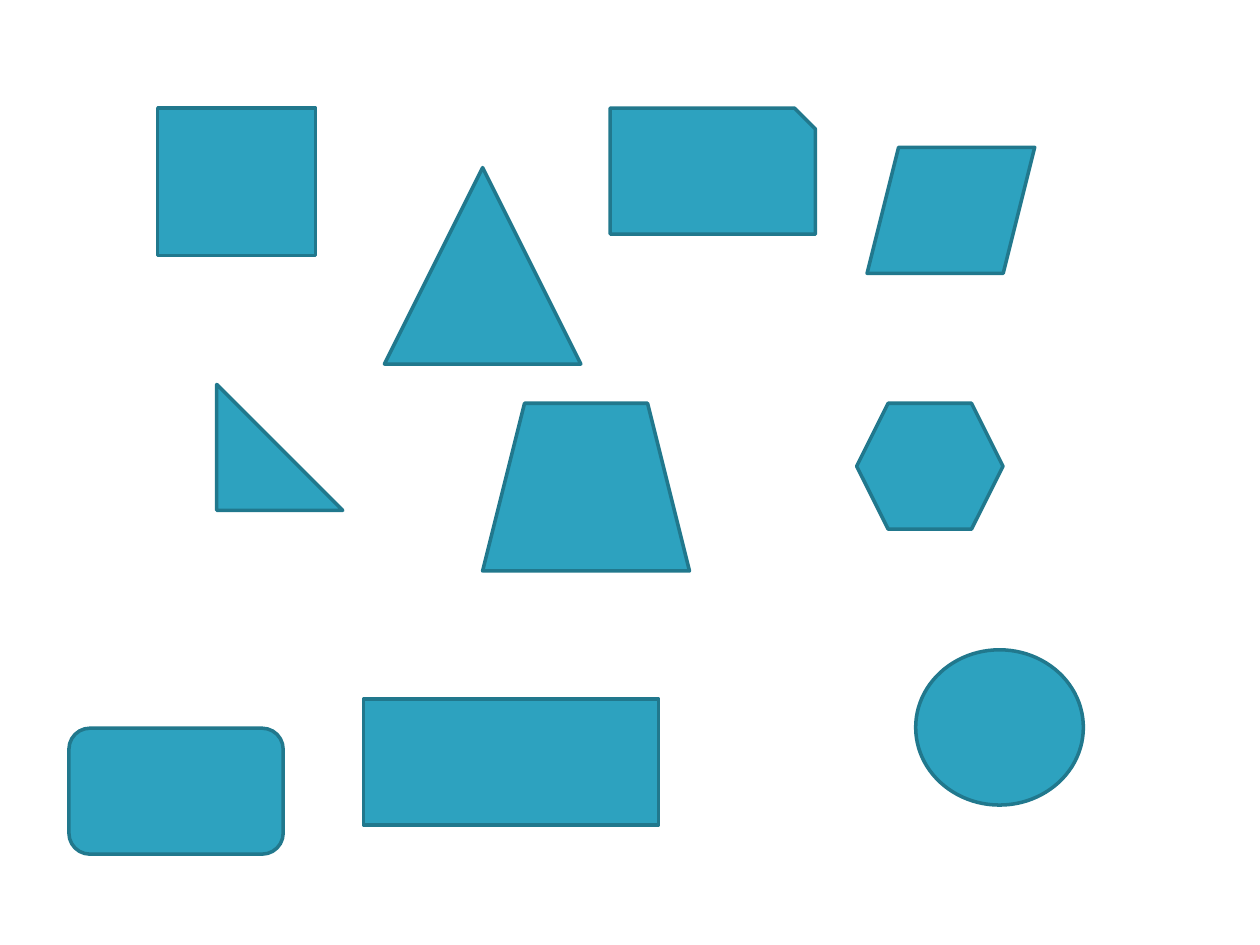
from dataclasses import dataclass

from pptx import Presentation
from pptx.dml.color import RGBColor
from pptx.enum.shapes import MSO_SHAPE
from pptx.util import Cm, Pt


@dataclass(frozen=True)
class Theme:
    fill: RGBColor = RGBColor(0x2D, 0xA2, 0xBF)
    edge: RGBColor = RGBColor(0x21, 0x78, 0x8D)
    width: float = 2


class Board:
    """Holds the style and the current slide."""

    def __init__(self, slide, theme):
        self.slide = slide
        self.theme = theme

    def figure(self, kind, left, top, width, height):
        shape = self.slide.shapes.add_shape(
            kind, Cm(left), Cm(top), Cm(width), Cm(height))
        shape.shadow.inherit = False
        shape.fill.solid()
        shape.fill.fore_color.rgb = self.theme.fill
        shape.line.color.rgb = self.theme.edge
        shape.line.width = Pt(self.theme.width)
        return shape


# Kind, left, top, width, height in centimetres, back to front
UNIT = 2.54  # height shared by most figures
FIGURES = [
    (MSO_SHAPE.RECTANGLE, 3.18, 2.18, 3.18, 2.97),
    (MSO_SHAPE.ISOSCELES_TRIANGLE, 7.75, 3.38, 3.96, 3.96),
    (MSO_SHAPE.PARALLELOGRAM, 17.48, 2.97, 3.38, UNIT),
    (MSO_SHAPE.RIGHT_TRIANGLE, 4.37, 7.75, UNIT, UNIT),
    (MSO_SHAPE.TRAPEZOID, 9.73, 8.13, 4.17, 3.38),
    (MSO_SHAPE.HEXAGON, 17.27, 8.13, 2.95, UNIT),
    (MSO_SHAPE.RECTANGLE, 7.33, 14.09, 5.95, UNIT),
    (MSO_SHAPE.OVAL, 18.46, 13.1, 3.38, 3.13),
    (MSO_SHAPE.ROUNDED_RECTANGLE, 1.39, 14.68, 4.32, UNIT),
    (MSO_SHAPE.SNIP_1_RECTANGLE, 12.3, 2.18, 4.14, UNIT),
]


def main():
    # Deck with one blank slide
    deck = Presentation()
    deck.slide_width, deck.slide_height = Cm(25.4), Cm(19.05)
    board = Board(deck.slides.add_slide(deck.slide_layouts[6]), Theme())

    # Geometric figures
    for item in FIGURES:
        board.figure(*item)

    deck.save("out.pptx")


if __name__ == "__main__":
    main()
